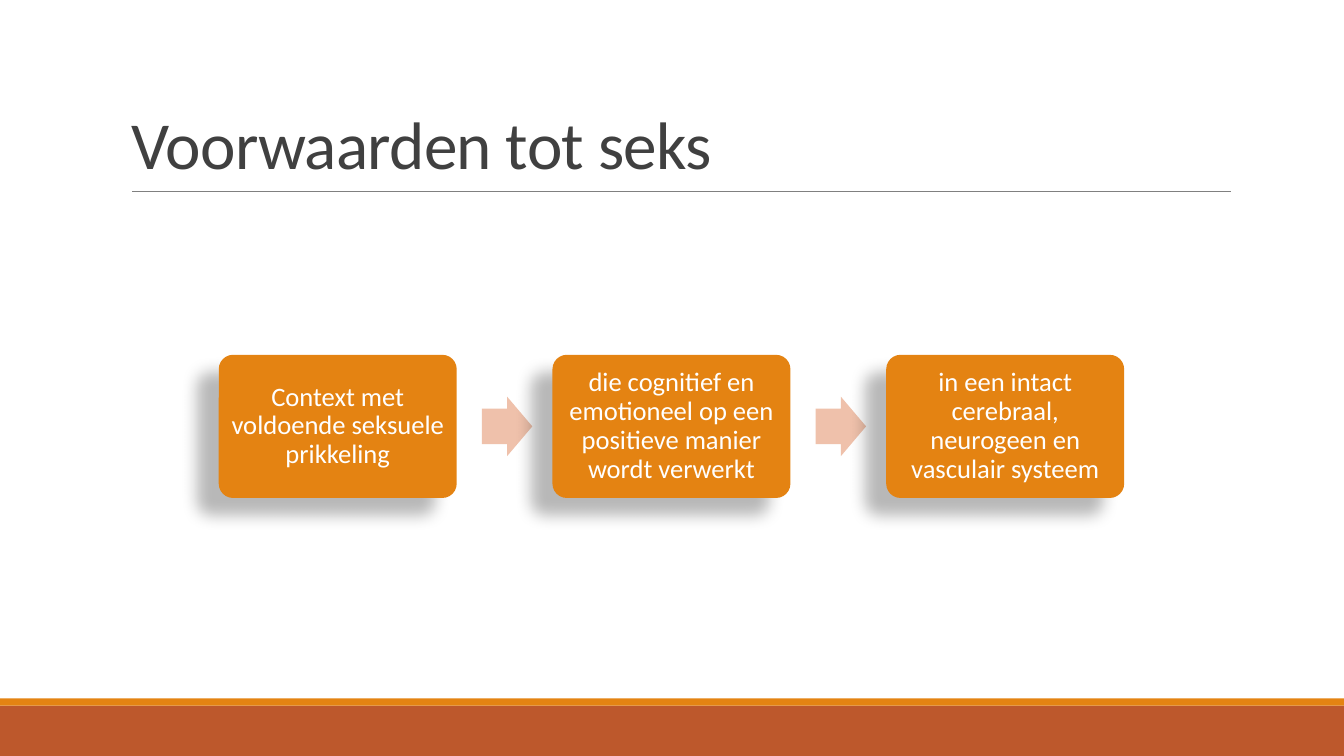
from lxml.etree import SubElement
from pptx import Presentation
from pptx.dml.color import RGBColor
from pptx.enum.shapes import MSO_CONNECTOR as Conn, MSO_SHAPE as Kind
from pptx.enum.text import MSO_ANCHOR as Anchor, MSO_AUTO_SIZE as Auto, PP_ALIGN as Align
from pptx.oxml.ns import qn
from pptx.util import Inches, Pt

WIDE, HIGH = 13.33, 7.5
LEFT, PITCH, MID = 2.17, 3.31, 4.23
BOX_W, BOX_H = 2.36, 1.42
ARROW_W, ARROW_H, ARROW_OFF = 0.5, 0.59, 2.61
ORANGE, RUST, PEACH = "E48312", "BD582C", "EFC1AB"
STEPS = (
    "Context met voldoende seksuele prikkeling",
    "die cognitief en emotioneel op een positieve manier wordt verwerkt",
    "in een intact cerebraal, neurogeen en vasculair systeem",
)


def paint(fmt, tone):
    """Give a fill a solid colour from a hex string."""
    fmt.solid()
    fmt.fore_color.rgb = RGBColor.from_string(tone)


def write(shape, text, size, tone, align=Align.LEFT, anchor=Anchor.MIDDLE,
          lead=0.9, inset=0.08, track=None):
    frame = shape.text_frame
    frame.word_wrap = True
    frame.auto_size = Auto.NONE
    frame.vertical_anchor = anchor
    frame.margin_left = frame.margin_right = Inches(inset)
    frame.margin_top = frame.margin_bottom = Inches(min(inset, 0.08))
    para = frame.paragraphs[0]
    para.alignment, para.line_spacing = align, lead
    run = para.add_run()
    run.text = text
    run.font.name, run.font.size = "Calibri", Pt(size)
    paint(run.font.fill, tone)
    if track is not None:
        run.font._element.set("spc", str(int(track * 100)))


def block(slide, kind, x, y, w, h, tone, adjust=()):
    shape = slide.shapes.add_shape(kind, Inches(x), Inches(y), Inches(w), Inches(h))
    for i, value in enumerate(adjust):
        shape.adjustments[i] = value
    paint(shape.fill, tone)
    shape.line.fill.background()
    shape.shadow.inherit = False
    return shape


def shade(shape):
    """Cast a soft shadow to the lower left."""
    effects = shape._element.spPr.find(qn("a:effectLst"))
    cast = SubElement(effects, qn("a:outerShdw"), blurRad=str(Pt(11.8)),
                      dist=str(Pt(19.7)), dir=str(141 * 60000),
                      algn="tl", rotWithShape="0")
    tone = SubElement(cast, qn("a:srgbClr"), val="000000")
    SubElement(tone, qn("a:alpha"), val="28000")


def rule(slide, x, y, end, tone):
    line = slide.shapes.add_connector(Conn.STRAIGHT, Inches(x), Inches(y),
                                      Inches(end), Inches(y))
    paint(line.line.fill, tone)
    line.line.width = Pt(0.5)
    SubElement(line._element.spPr, qn("a:effectLst"))


def head(slide, text):
    title = slide.shapes.title
    title.left, title.top = Inches(1.2), Inches(0.31)
    title.width, title.height = Inches(11), Inches(1.59)
    write(title, text, 48, "404040", anchor=Anchor.BOTTOM, lead=0.85,
          inset=0.1, track=-0.5)


def flow(slide, steps):
    """Draw the steps in a row with an arrow between each pair."""
    for i, text in enumerate(steps):
        x = LEFT + i * PITCH
        box = block(slide, Kind.ROUNDED_RECTANGLE, x, MID - BOX_H / 2,
                    BOX_W, BOX_H, ORANGE, (0.1,))
        shade(box)
        write(box, text, 19, "FFFFFF", align=Align.CENTER)
        if i < len(steps) - 1:
            block(slide, Kind.RIGHT_ARROW, x + ARROW_OFF, MID - ARROW_H / 2,
                  ARROW_W, ARROW_H, PEACH, (0.6, 0.5))


def main():
    deck = Presentation()
    deck.slide_width, deck.slide_height = Inches(WIDE), Inches(HIGH)
    slide = deck.slides.add_slide(deck.slide_layouts[5])
    block(slide, Kind.RECTANGLE, 0, 7, WIDE, 0.5, RUST)
    block(slide, Kind.RECTANGLE, 0, 6.93, WIDE, 0.07, ORANGE)
    rule(slide, 1.31, 1.9, 12.21, "808080")
    head(slide, "Voorwaarden tot seks")
    flow(slide, STEPS)
    deck.save("out.pptx")


if __name__ == "__main__":
    main()
